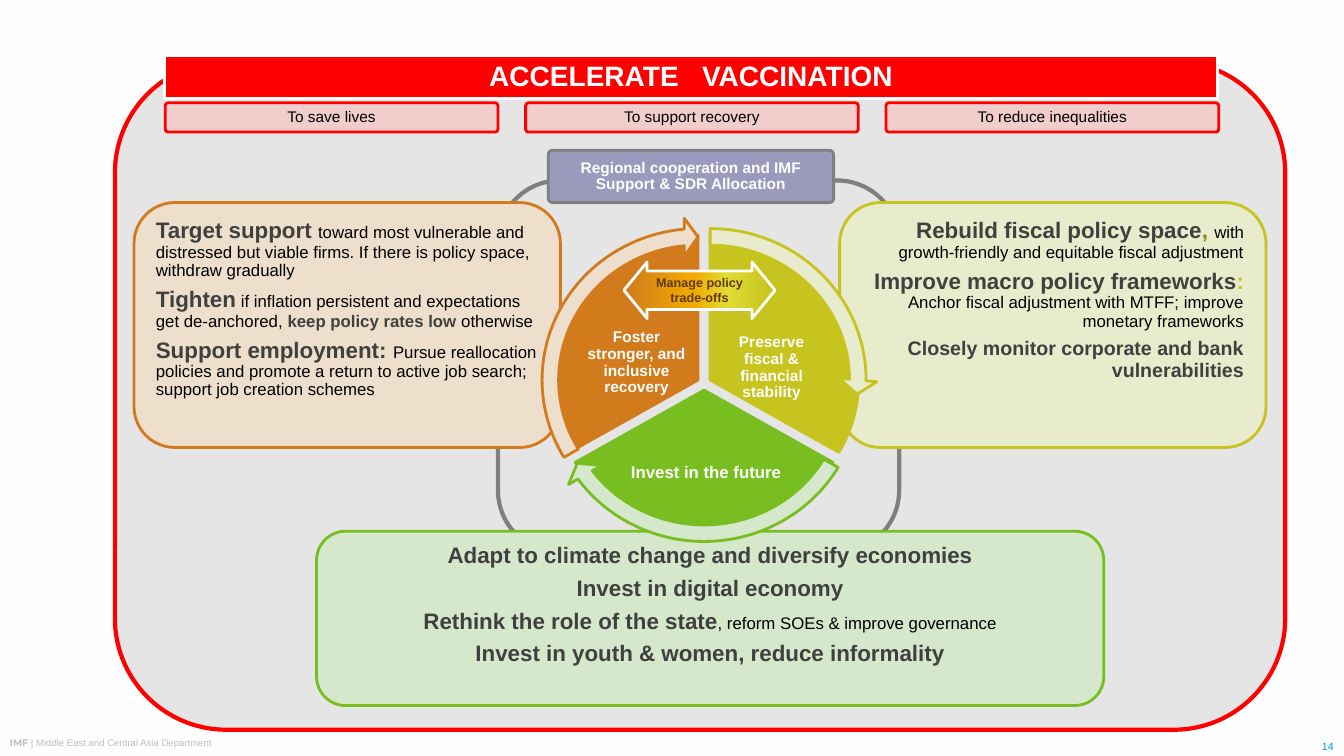
import math
from dataclasses import dataclass

from lxml import etree
from pptx import Presentation
from pptx import util as u
from pptx.dml.color import RGBColor
from pptx.enum import shapes, text
from pptx.oxml.ns import qn

# Grid: square cells of a tenth of an inch, 133.3 columns by 75 rows
CELL = u.Inches(0.1)
COLS, ROWS = 133.33, 75

C = {
    "white": "FEFEFE", "black": "000000", "ink": "404040", "red": "FF0000",
    "pink": "F1CDCC", "panel": "E5E5E5", "grey": "7F7F7F", "lilac": "9A9ABC",
    "orange": "D17B1D", "peach": "EEDFCC", "olive": "C7C41F", "cream": "E8EBCC",
    "moss": "898615", "green": "78BE20", "mint": "D6E8CC", "brown": "623A0E",
    "amber": "F2A900", "lemon": "DFDB31", "footer": "BEBEBE", "number": "009CDE",
}
LEFT, CENTER, RIGHT = text.PP_ALIGN.LEFT, text.PP_ALIGN.CENTER, text.PP_ALIGN.RIGHT
TOP, MIDDLE, BOTTOM = text.MSO_ANCHOR.TOP, text.MSO_ANCHOR.MIDDLE, text.MSO_ANCHOR.BOTTOM
ROUNDED = shapes.MSO_SHAPE.ROUNDED_RECTANGLE


@dataclass
class Area:
    col: float
    row: float
    cols: float
    rows: float

    def emu(self) -> list[int]:
        return [g(v) for v in (self.col, self.row, self.cols, self.rows)]


@dataclass
class Run:
    text: str
    size: float = 12
    color: str = "black"
    bold: bool = False
    font: str = "Arial"
    spacing: int = 0  # hundredths of a point


@dataclass
class Panel:
    area: Area
    fill: str
    line: str
    align: text.PP_ALIGN
    paragraphs: list[list[Run]]


@dataclass
class Wedge:
    label: str
    size: float
    label_area: Area
    hub: tuple[float, float]
    start: float  # degrees, clockwise from three o'clock
    fill: str
    ring: str


def g(cells: float) -> int:
    return round(cells * CELL)


def rgb(name: str) -> RGBColor:
    return RGBColor.from_string(C[name])


def head(words: str, size: float = 16) -> Run:
    return Run(words, size, "ink", True)


def write(sp, paragraphs: list[list[Run]], *, align=CENTER, anchor=MIDDLE,
          inset=(1, 0.5, 1, 0.5), after: float = 0, leading: float = 0.9) -> None:
    tf = sp.text_frame
    tf.word_wrap, tf.auto_size, tf.vertical_anchor = True, text.MSO_AUTO_SIZE.NONE, anchor
    tf.margin_left, tf.margin_top, tf.margin_right, tf.margin_bottom = map(g, inset)
    for i, runs in enumerate(paragraphs):
        p = tf.add_paragraph() if i else tf.paragraphs[0]
        p.alignment, p.line_spacing, p.space_after = align, leading, u.Pt(after)
        for run in runs:
            r = p.add_run()
            r.text = run.text
            r.font.name, r.font.size, r.font.bold = run.font, u.Pt(run.size), run.bold
            r.font.color.rgb = rgb(run.color)
            if run.spacing:
                r.font._element.set("spc", str(run.spacing))


def paint(sp, fill: str | None, line: str, width: float = 2) -> None:
    if fill:
        sp.fill.solid()
        sp.fill.fore_color.rgb = rgb(fill)
    else:
        sp.fill.background()
    sp.line.color.rgb = rgb(line)
    sp.line.width = u.Pt(width)


def draw(s, kind, area: Area, fill: str | None, line: str, width: float = 2, adj=()):
    sp = s.shapes.add_shape(kind, *area.emu())
    sp.shadow.inherit = False
    paint(sp, fill, line, width)
    for i, value in enumerate(adj):
        sp.adjustments[i] = value
    return sp


def draw_panel(s, panel: Panel) -> None:
    sp = draw(s, ROUNDED, panel.area, panel.fill, panel.line)
    write(sp, panel.paragraphs, align=panel.align, anchor=TOP, after=6)


def draw_wedge(s, wedge: Wedge) -> None:
    x, y = wedge.hub
    angles = [math.radians(wedge.start + step) for step in range(0, 121, 2)]
    arc = [(g(x + 14.75 * math.cos(a)), g(y + 14.35 * math.sin(a))) for a in angles]
    builder = s.shapes.build_freeform(g(x), g(y))
    builder.add_line_segments(arc, close=True)
    sp = builder.convert_to_shape()
    sp.shadow.inherit = False
    paint(sp, wedge.fill, wedge.fill)
    left, top, width, height = wedge.label_area.emu()
    edges = (left - sp.left, top - sp.top, sp.left + sp.width - left - width,
             sp.top + sp.height - top - height)
    write(sp, [[Run(wedge.label, wedge.size, "white", True)]],
          inset=[e / CELL for e in edges])
    # Angle adjustments count 0.6 per degree
    ring = Area(x - 16.55, y - 16.1, 33.1, 32.2)
    draw(s, shapes.MSO_SHAPE.CIRCULAR_ARROW, ring, wedge.ring, wedge.fill,
         adj=(0.051, 3.28, (wedge.start + 114.5) * 0.6, wedge.start * 0.6, 0.059))


def draw_tradeoffs(s) -> None:
    sp = draw(s, shapes.MSO_SHAPE.LEFT_RIGHT_ARROW, Area(61.9, 26, 15, 5.6), None, "white",
              adj=(0.68, 0.41))
    sp.fill.gradient()
    sp.fill.gradient_angle = 0
    stops = sp._element.find(".//" + qn("a:gsLst"))
    for old in list(stops):
        stops.remove(old)
    for share, color in ((0, "orange"), (46, "amber"), (68, "lemon"), (100, "olive")):
        stop = etree.SubElement(stops, qn("a:gs"), pos=str(share * 1000))
        etree.SubElement(stop, qn("a:srgbClr"), val=C[color])
    write(sp, [[Run("Manage policy trade-offs", 9, "brown", True)]], leading=1)


PILLS = ["To save lives", "To support recovery", "To reduce inequalities"]

PANELS = [
    Panel(Area(83.3, 20.1, 42.3, 24.3), "cream", "olive", RIGHT, [
        [head("Rebuild fiscal policy space"), Run(", ", 16, "moss", True),
         Run("with growth-friendly and equitable fiscal adjustment")],
        [head("Improve macro policy frameworks"), Run(": ", 16, "olive", True),
         Run("Anchor fiscal adjustment with MTFF; improve monetary frameworks")],
        [head("Closely monitor corporate and bank vulnerabilities", 14)]]),
    Panel(Area(31.4, 52.7, 78.1, 17.3), "mint", "green", CENTER, [
        [head("Adapt to climate change and diversify economies")],
        [head("Invest in digital economy")],
        [head("Rethink the role of the state"),
         Run(", reform SOEs & improve governance")],
        [head("Invest in youth & women, reduce informality")]]),
    Panel(Area(13.3, 20.1, 42.3, 24.3), "peach", "orange", LEFT, [
        [head("Target support "),
         Run("toward most vulnerable and distressed but viable firms. "
             "If there is policy space, withdraw gradually")],
        [head("Tighten"),
         Run(" if inflation persistent and expectations get de-anchored, "),
         head("keep policy rates low ", 12), Run("otherwise")],
        [head("Support employment: "),
         Run("Pursue reallocation policies and promote a return to active job search; "
             "support job creation schemes")]]),
]

WEDGES = [
    Wedge("Invest in the future", 12, Area(62.3, 43.6, 15.5, 6.6), (69.85, 38.7), 30,
          "green", "mint"),
    Wedge("Foster stronger, and inclusive recovery", 11, Area(58, 32, 10.3, 8),
          (69.25, 37.7), 150, "orange", "peach"),
    Wedge("Preserve fiscal & financial stability", 11, Area(71.4, 32.5, 10.3, 8),
          (70.45, 37.7), 270, "olive", "cream"),
]


def main() -> None:
    prs = Presentation()
    prs.slide_width, prs.slide_height = g(COLS), g(ROWS)
    s = prs.slides.add_slide(prs.slide_layouts[5])
    s.background.fill.solid()
    s.background.fill.fore_color.rgb = rgb("white")

    # Footer and page number
    footer = s.shapes.add_textbox(*Area(0, 72.6, 100, 2.1).emu())
    write(footer, [[Run("IMF ", 6.8, "footer", True, "Montserrat"),
                    Run("| Middle East and Central Asia Department", 6.8, "footer")]],
          align=LEFT, anchor=TOP, leading=1)
    number = s.shapes.add_textbox(*Area(120.1, 72.9, 13.2, 2.3).emu())
    write(number, [[Run("14", 7.5, "number")]], align=RIGHT, anchor=BOTTOM, leading=1)

    # Frame with the title banner in front of it
    draw(s, ROUNDED, Area(11.4, 6.1, 116.1, 66.3), "panel", "red", 3)
    title = s.shapes.title
    title.left, title.top, title.width, title.height = Area(16.3, 5.5, 104.5, 4.3).emu()
    paint(title, "red", "white")
    write(title, [[Run("ACCELERATE", 20, "white", True),
                   Run(" ", 20, "white", True, spacing=1100),
                   Run("VACCINATION", 20, "white", True)]], inset=(0.9,) * 4)
    s.shapes._spTree.append(title._element)

    # Three goals
    for i, goal in enumerate(PILLS):
        sp = draw(s, ROUNDED, Area(16.4 + 35.75 * i, 10.2, 33, 2.9), "pink", "red", adj=(0.1,))
        write(sp, [[Run(goal, 11)]], inset=(0.6,) * 4)

    # Linking loop and its heading
    draw(s, ROUNDED, Area(49.4, 17.9, 39.8, 36.9), None, "grey", 3)
    sp = draw(s, ROUNDED, Area(54.4, 14.9, 28.3, 5.2), "lilac", "grey", adj=(0.08,))
    write(sp, [[Run("Regional cooperation and IMF Support & SDR Allocation", 11, "white", True)]],
          inset=(0.6,) * 4)

    # Policy panels, cycle and trade-offs arrow
    for panel in PANELS:
        draw_panel(s, panel)
    for wedge in WEDGES:
        draw_wedge(s, wedge)
    draw_tradeoffs(s)
    prs.save("out.pptx")


if __name__ == "__main__":
    main()
